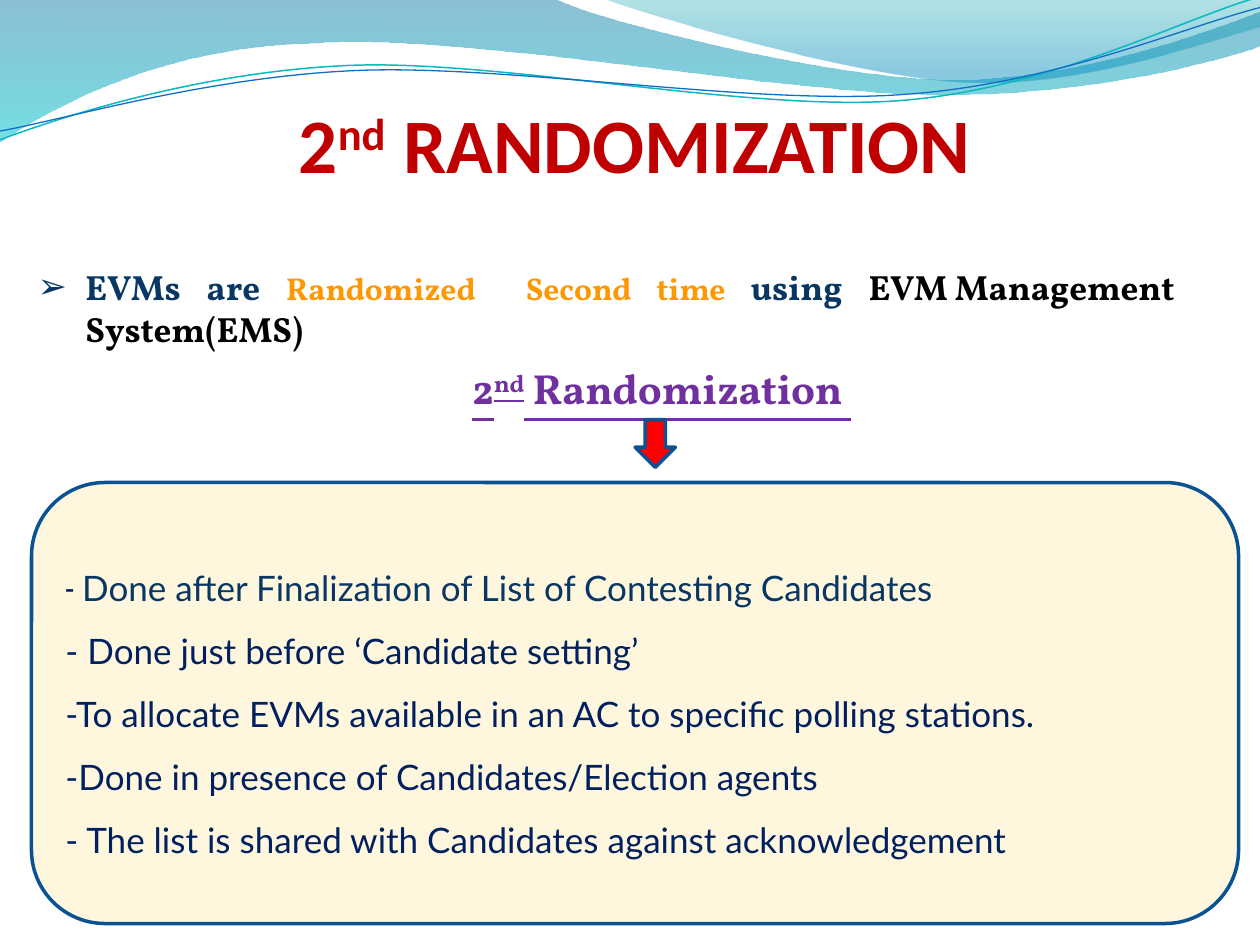
from lxml import etree
from pptx import Presentation
from pptx.dml.color import RGBColor
from pptx.enum.shapes import MSO_SHAPE as SHAPE
from pptx.enum.text import MSO_ANCHOR as ANCHOR, MSO_AUTO_SIZE as AUTO_SIZE, PP_ALIGN as ALIGN
from pptx.oxml.ns import qn
from pptx.util import Inches, Pt

RED = RGBColor(0xC0, 0x00, 0x00)
ARROW_RED = RGBColor(0xFF, 0x00, 0x00)
PURPLE = RGBColor(0x70, 0x30, 0xA0)
NAVY = RGBColor(0x08, 0x37, 0x63)
DEEP_NAVY = RGBColor(0x00, 0x20, 0x60)
ORANGE = RGBColor(0xFF, 0x98, 0x00)
BLACK = RGBColor(0x00, 0x00, 0x00)
CREAM = RGBColor(0xFF, 0xF7, 0xDD)
OUTLINE = RGBColor(0x0B, 0x52, 0x92)
WAVE_BLUE = RGBColor(0x00, 0x74, 0xA1)
WAVE_CYAN = RGBColor(0x00, 0xC6, 0xCF)
CREST_TEAL = RGBColor(0x00, 0xA1, 0xA9)
CREST_BLUE = RGBColor(0x00, 0x8B, 0xBF)
LINE_TEAL = RGBColor(0x0A, 0xB8, 0xBF)
LINE_BLUE = RGBColor(0x0F, 0x6F, 0xC6)


def add_run(paragraph, text, *, font, size, color, bold=False, underline=False, raised=False):
    run = paragraph.add_run()
    run.text = text
    run.font.name = font
    run.font.size = Pt(size)
    run.font.color.rgb = color
    run.font.bold = bold
    run.font.underline = underline
    if raised:
        run.font._element.set("baseline", "30000")


def add_outline(shapes, start, segments, closed):
    """Draw segments of one point (line) or three points (cubic curve), in inches."""
    corners = [(Inches(x), Inches(y)) for x, y in [start, *sum(segments, [])]]
    builder = shapes.build_freeform(*corners[0])
    builder.add_line_segments(corners[1:], close=closed)
    outline = builder.convert_to_shape()
    outline.shadow.inherit = False
    lines = iter(list(outline._element.iter(qn("a:lnTo"))))
    for segment in segments:
        first, *others = [next(lines) for _ in segment]
        if others:
            curve = etree.Element(qn("a:cubicBezTo"))
            first.addprevious(curve)
            for line in (first, *others):
                curve.append(line[0])
                line.getparent().remove(line)
    return outline


prs = Presentation()
prs.slide_width, prs.slide_height = Inches(10), Inches(7.5)
slide = prs.slides.add_slide(prs.slide_layouts[1])
shapes = slide.shapes

# Waves across the top: start, segments, gradient stops (position, colour, opacity %)
waves = [
    ((0, 0),
     [[(4.4, -0.01)],
      [(4.76, 0.17), (6.64, 0.63), (7.58, 0.63)],
      [(8.53, 0.63), (9.58, 0.26), (10, 0.09)],
      [(10.01, 0.36)],
      [(9.83, 0.44), (8.7, 0.76), (7.46, 0.75)],
      [(6.22, 0.75), (3.82, 0.28), (2.57, 0.34)],
      [(1.29, 0.36), (0.46, 0.83), (-0.01, 1.13)]],
     [(0, WAVE_BLUE, 45), (1, WAVE_CYAN, 55)]),
    ((4.79, -0.01),
     [[(5.09, 0.11), (6.82, 0.62), (7.69, 0.65)],
      [(8.56, 0.69), (9.61, 0.32), (10, 0.21)],
      [(10, 0)]],
     [(0, CREST_TEAL, 30), (0.8, CREST_BLUE, 45)]),
]
for start, segments, stops in waves:
    wave = add_outline(shapes, start, segments, closed=True)
    wave.line.fill.background()
    wave.fill.gradient()
    wave.fill.gradient_angle = 270
    for stop, (position, color, _) in zip(wave.fill.gradient_stops, stops):
        stop.position = position
        stop.color.rgb = color
    for rgb, (_, _, opacity) in zip(wave._element.spPr.iter(qn("a:srgbClr")), stops):
        etree.SubElement(rgb, qn("a:alpha")).set("val", str(opacity * 1000))

ripples = [
    ((0, 1.11),
     [[(0.48, 0.93), (1.58, 0.57), (2.77, 0.52)],
      [(3.95, 0.47), (5.93, 0.89), (7.13, 0.8)],
      [(8.33, 0.71), (9.38, 0.15), (9.98, -0.02)]], LINE_TEAL, 0.85),
    ((0, 1.04),
     [[(0.47, 0.96), (1.64, 0.61), (2.83, 0.56)],
      [(4.03, 0.51), (5.97, 0.84), (7.17, 0.75)],
      [(8.36, 0.67), (9.41, 0.21), (10, 0.06)]], LINE_BLUE, 0.75),
]
for start, segments, color, width in ripples:
    ripple = add_outline(shapes, start, segments, closed=False)
    ripple.fill.background()
    ripple.line.color.rgb = color
    ripple.line.width = Pt(width)

# Title
title = shapes.title
title.left, title.top, title.width, title.height = Inches(0.5), Inches(0.25), Inches(9.08), Inches(1.25)
frame = title.text_frame
frame.auto_size = AUTO_SIZE.NONE
frame.vertical_anchor = ANCHOR.BOTTOM
frame.margin_left = frame.margin_right = frame.margin_bottom = 0
heading = frame.paragraphs[0]
heading.alignment = ALIGN.CENTER
for text, raised in [("2", False), ("nd", True), (" RANDOMIZATION", False)]:
    add_run(heading, text, font="Calibri", size=44, color=RED, bold=True, raised=raised)

# Subheading
body = slide.placeholders[1]
body.left, body.top, body.width, body.height = Inches(3.5), Inches(2.83), Inches(3.5), Inches(1.33)
body.text_frame.auto_size = AUTO_SIZE.NONE
subheading = body.text_frame.paragraphs[0]
subheading.alignment = ALIGN.CENTER
props = subheading._p.get_or_add_pPr()
props.set("marL", str(Inches(0.3)))
props.set("indent", str(Inches(-0.3)))
etree.SubElement(props, qn("a:buNone"))
for text, raised in [("2", False), ("nd", True), (" Randomization ", False)]:
    add_run(subheading, text, font="Vollkorn", size=24, color=PURPLE, bold=True,
            underline=True, raised=raised)

# Bulleted statement
statement_box = shapes.add_textbox(Inches(0.2), Inches(2.06), Inches(9.22), Inches(0.77))
statement_box.text_frame.word_wrap = True
statement = statement_box.text_frame.paragraphs[0]
statement.alignment = ALIGN.JUSTIFY
props = statement._p.get_or_add_pPr()
props.set("marL", str(Inches(0.38)))
props.set("indent", str(Inches(-0.38)))
etree.SubElement(props, qn("a:buFont")).set("typeface", "Arial")
etree.SubElement(props, qn("a:buChar")).set("char", "➢")
for text, size, color in [("EVMs are ", 20, NAVY),
                          ("Randomized  Second time ", 18, ORANGE),
                          ("using ", 20, NAVY),
                          ("EVM\u00a0Management System(EMS)", 20, BLACK)]:
    add_run(statement, text, font="Vollkorn", size=size, color=color, bold=True)

# Arrow and panel
arrow = shapes.add_shape(SHAPE.DOWN_ARROW, Inches(5.04), Inches(3.33), Inches(0.32), Inches(0.38))
panel = shapes.add_shape(SHAPE.ROUNDED_RECTANGLE, Inches(0.25), Inches(3.83), Inches(9.58), Inches(3.5))
for part, color in [(arrow, ARROW_RED), (panel, CREAM)]:
    part.shadow.inherit = False
    part.fill.solid()
    part.fill.fore_color.rgb = color
    part.line.color.rgb = OUTLINE
    part.line.width = Pt(2)

frame = panel.text_frame
frame.word_wrap = True
frame.vertical_anchor = ANCHOR.MIDDLE
points = [  # text, colour, bulleted with a dash
    ("Done after Finalization of List of Contesting Candidates", NAVY, False),
    ("- Done just before ‘Candidate setting’", DEEP_NAVY, False),
    ("-To allocate EVMs available in an AC to specific polling stations.", DEEP_NAVY, False),
    ("Done in presence of Candidates/Election agents", DEEP_NAVY, True),
    (" The list is shared with Candidates against acknowledgement", DEEP_NAVY, True),
]
for number, (text, color, dashed) in enumerate(points):
    point = frame.add_paragraph() if number else frame.paragraphs[0]
    point.alignment = ALIGN.LEFT
    point.line_spacing = 1.5
    if dashed:
        props = point._p.get_or_add_pPr()
        etree.SubElement(props, qn("a:buFont")).set("typeface", "Lato")
        etree.SubElement(props, qn("a:buChar")).set("char", "-")
    if number == 0:
        add_run(point, "- ", font="Roboto Condensed", size=20, color=DEEP_NAVY)
    add_run(point, text, font="Lato", size=20, color=color)

prs.save("out.pptx")
